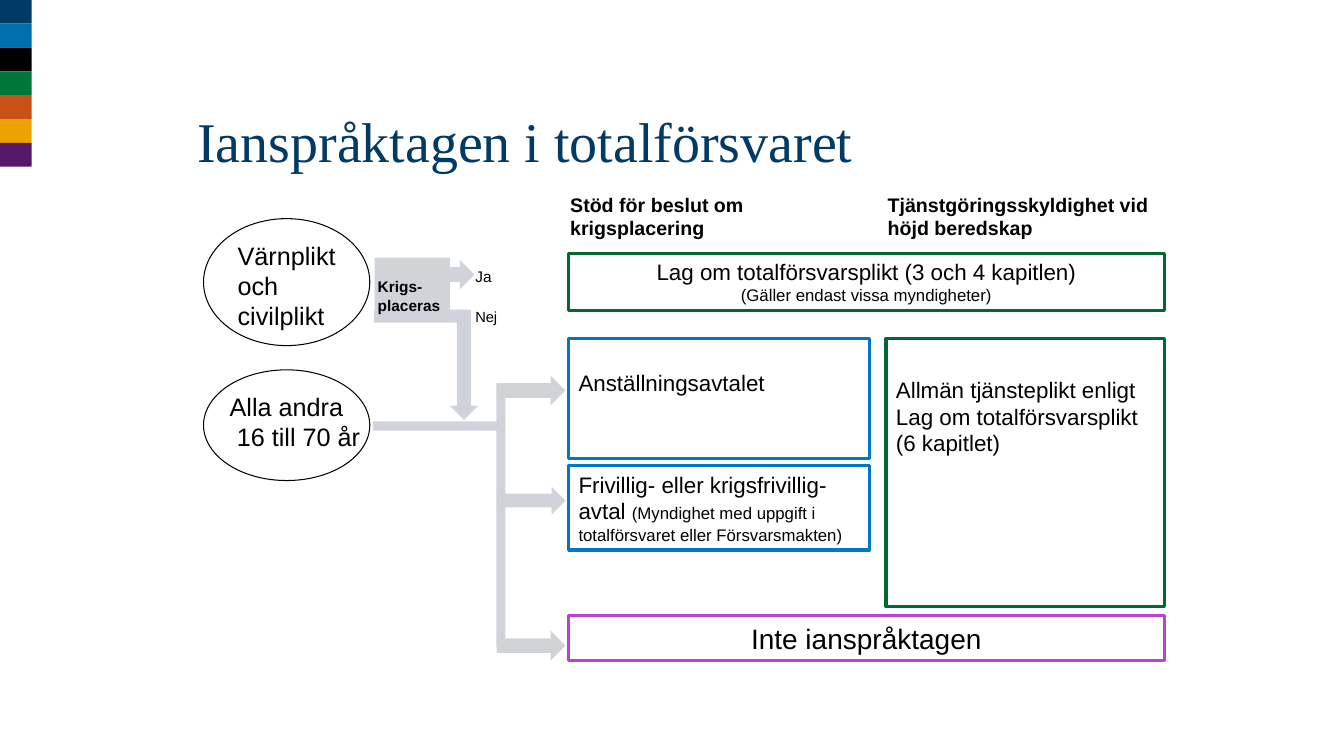
from dataclasses import dataclass
from typing import Optional

from pptx import Presentation
from pptx.dml.color import RGBColor
from pptx.enum import shapes, text
from pptx.util import Cm, Pt

SHAPE = shapes.MSO_SHAPE
LEFT, CENTER = text.PP_ALIGN.LEFT, text.PP_ALIGN.CENTER
BLACK, WHITE, NAVY, GREY = "000000", "FFFFFF", "003A65", "D0D3D9"
GREEN, BLUE, PURPLE = "006832", "0075CB", "B743D4"
STRIPES = [NAVY, "006EAE", BLACK, "007638", "CA5116", "ECA300", "561766"]
STRIPE_WIDTH, STRIPE_HEIGHT = 0.8, 0.6

# Columns shared by the boxes (cm)
BOX_LEFT, BOX_WIDTH, FULL_WIDTH = 14.33, 7.59, 15.01
ROW_TOP = 8.53
BRANCH_LEFT, BRANCH_WIDTH = 12.52, 1.73


@dataclass
class Line:
    spans: list[tuple[str, float]]
    indent: float = 0


@dataclass
class Figure:
    left: float
    top: float
    width: float
    height: float
    kind: SHAPE = SHAPE.RECTANGLE
    fill: Optional[str] = None
    outline: Optional[str] = None
    weight: float = 2.25


@dataclass
class Label:
    frame: Figure
    lines: list[Line]
    align: text.PP_ALIGN = LEFT
    bold: bool = False
    top_inset: float = 0.13


def colour(value: str) -> RGBColor:
    return RGBColor.from_string(value)


def draw_figure(page, figure: Figure):
    shape = page.shapes.add_shape(
        figure.kind, Cm(figure.left), Cm(figure.top), Cm(figure.width), Cm(figure.height))
    shape.shadow.inherit = False
    if figure.fill:
        shape.fill.solid()
        shape.fill.fore_color.rgb = colour(figure.fill)
    else:
        shape.fill.background()
    if figure.outline:
        shape.line.color.rgb = colour(figure.outline)
        shape.line.width = Pt(figure.weight)
    else:
        shape.line.fill.background()
    return shape


def draw_label(page, label: Label) -> None:
    frame = label.frame
    if frame.fill or frame.outline:
        box = draw_figure(page, frame)
    else:
        box = page.shapes.add_textbox(
            Cm(frame.left), Cm(frame.top), Cm(frame.width), Cm(frame.height))
    body = box.text_frame
    body.word_wrap = True
    body.vertical_anchor = text.MSO_ANCHOR.TOP
    body.margin_top = Cm(label.top_inset)
    for number, line in enumerate(label.lines):
        para = body.add_paragraph() if number else body.paragraphs[0]
        para.alignment = label.align
        if line.indent:
            para._p.get_or_add_pPr().set("marL", str(Cm(line.indent)))
        para.font.name = "Arial"
        para.font.bold = label.bold
        para.font.color.rgb = colour(BLACK)
        para.font.size = Pt(line.spans[0][1])
        for words, size in line.spans:
            span = para.add_run()
            span.text = words
            if len(line.spans) > 1:
                span.font.size = Pt(size)


def draw_title(page) -> None:
    title = page.shapes.title
    title.left, title.top, title.width, title.height = Cm(4.72), Cm(2.13), Cm(19.2), Cm(2.79)
    title.text_frame.text = "Ianspråktagen i totalförsvaret"
    title.text_frame.vertical_anchor = text.MSO_ANCHOR.MIDDLE
    para = title.text_frame.paragraphs[0]
    para.alignment = LEFT
    para.font.name = "Times New Roman"
    para.font.size = Pt(40)
    para.font.color.rgb = colour(NAVY)


LABELS = [
    # Groups of people
    Label(Figure(5.74, 5.92, 3.66, 2.57), [Line([("Värnplikt och civilplikt", 18)])]),
    Label(Figure(5.54, 9.73, 4.39, 1.8),
          [Line([("Alla andra", 18)]), Line([("16 till 70 år", 18)], indent=0.18)]),
    # Legal grounds
    Label(Figure(22.33, ROW_TOP, 7.01, 6.76, outline=GREEN),
          [Line([("Allmän tjänsteplikt enligt Lag om totalförsvarsplikt", 16)]),
           Line([("(6 kapitlet)", 16)])], top_inset=0.94),
    Label(Figure(BOX_LEFT, 6.38, FULL_WIDTH, 1.45, outline=GREEN),
          [Line([("Lag om totalförsvarsplikt (3 och 4 kapitlen)", 16)]),
           Line([("(Gäller endast vissa myndigheter)", 12)])], CENTER),
    Label(Figure(BOX_LEFT, ROW_TOP, BOX_WIDTH, 3.02, outline=BLUE),
          [Line([("Anställningsavtalet", 16)])], top_inset=0.78),
    Label(Figure(BOX_LEFT, 11.73, BOX_WIDTH, 2.13, outline=BLUE),
          [Line([("Frivillig- eller krigsfrivillig-avtal ", 16),
                 ("(Myndighet med uppgift i totalförsvaret eller Försvarsmakten)", 12)])]),
    Label(Figure(BOX_LEFT, 15.52, FULL_WIDTH, 1.12, fill=WHITE, outline=PURPLE),
          [Line([("Inte ianspråktagen", 20)])], CENTER),
    # Answers
    Label(Figure(11.73, 6.6, 1.42, 0.74, outline=WHITE, weight=0.75), [Line([("Ja", 11)])]),
    Label(Figure(11.73, 7.62, 1.57, 0.71, outline=WHITE, weight=0.75), [Line([("Nej", 10.5)])]),
    # Column headings
    Label(Figure(14.12, 4.72, 8, 1.45),
          [Line([("Stöd för beslut om krigsplacering", 14)])], bold=True),
    Label(Figure(22.12, 4.72, 7.19, 1.45),
          [Line([("Tjänstgöringsskyldighet vid höjd beredskap", 14)])], bold=True),
]

QUESTION = Label(Figure(9.27, 6.86, 2.72, 1.19), [Line([("Krigs-placeras", 11)])], bold=True)

FLOW = [
    # Ovals around the groups
    Figure(5.13, 5.51, 4.19, 3.2, SHAPE.OVAL, outline=BLACK, weight=0.75),
    Figure(5.13, 9.32, 4.19, 2.79, SHAPE.OVAL, outline=BLACK, weight=0.75),
    # Yes and no arrows
    Figure(9.65, 6.55, 2.31, 0.74, SHAPE.RIGHT_ARROW, GREY),
    Figure(11.34, 7.81, 0.71, 2.77, SHAPE.DOWN_ARROW, GREY),
    # Branches to the boxes
    *(Figure(BRANCH_LEFT, top, BRANCH_WIDTH, height, SHAPE.RIGHT_ARROW, GREY)
      for top, height in [(15.9, 0.74), (12.27, 0.69), (9.47, 0.74)]),
    # Question block, trunk and feeder
    Figure(9.42, 7.8, 2.39, 0.33, fill=GREY),
    Figure(9.44, 6.49, 1.9, 1.37, fill=GREY),
    Figure(12.51, 9.66, 0.23, 6.65, fill=GREY),
    Figure(9.4, 10.62, 3.33, 0.23, fill=GREY),
]


def main() -> None:
    deck = Presentation()
    deck.slide_width, deck.slide_height = Cm(33.87), Cm(19.05)
    page = deck.slides.add_slide(deck.slide_layouts[5])

    # Colour strip in the corner
    for row, fill in enumerate(STRIPES):
        draw_figure(page, Figure(0, row * STRIPE_HEIGHT, STRIPE_WIDTH, STRIPE_HEIGHT, fill=fill))

    draw_title(page)
    for label in LABELS:
        draw_label(page, label)
    for figure in FLOW:
        draw_figure(page, figure)
    draw_label(page, QUESTION)
    deck.save("out.pptx")


if __name__ == "__main__":
    main()
